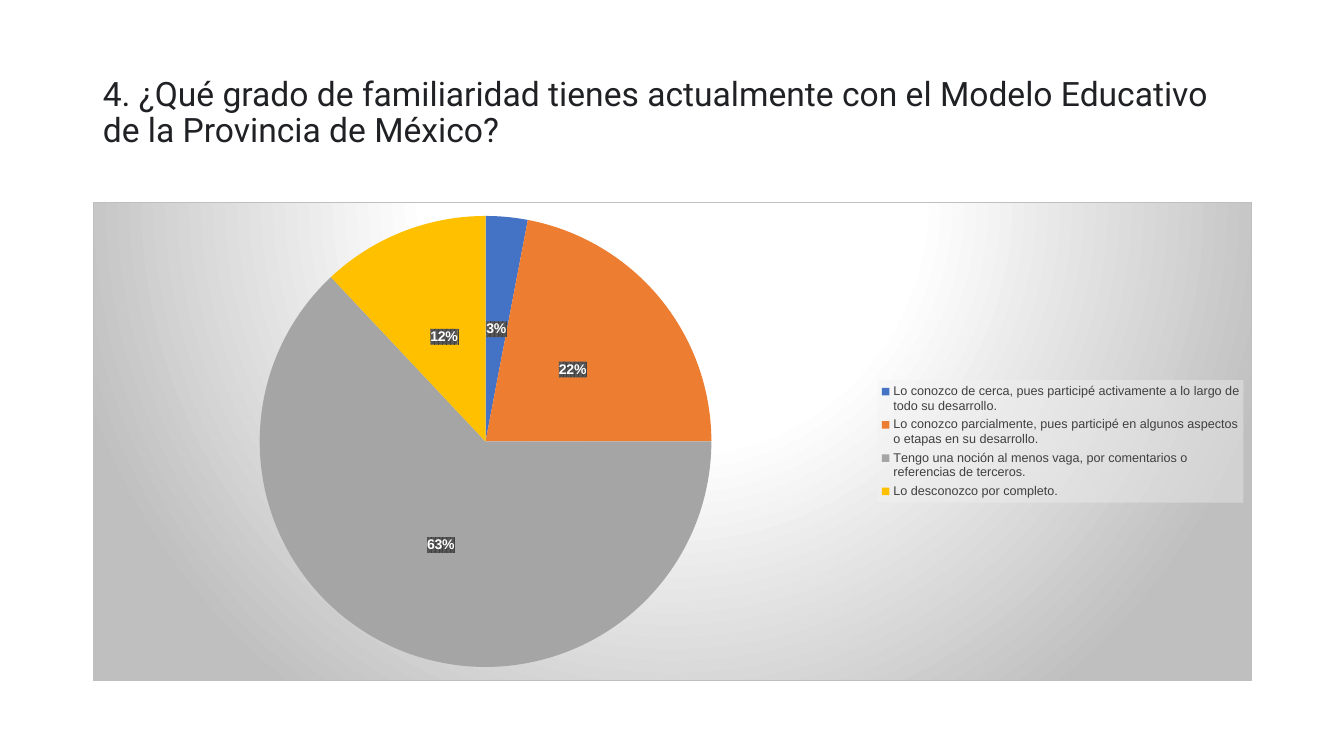
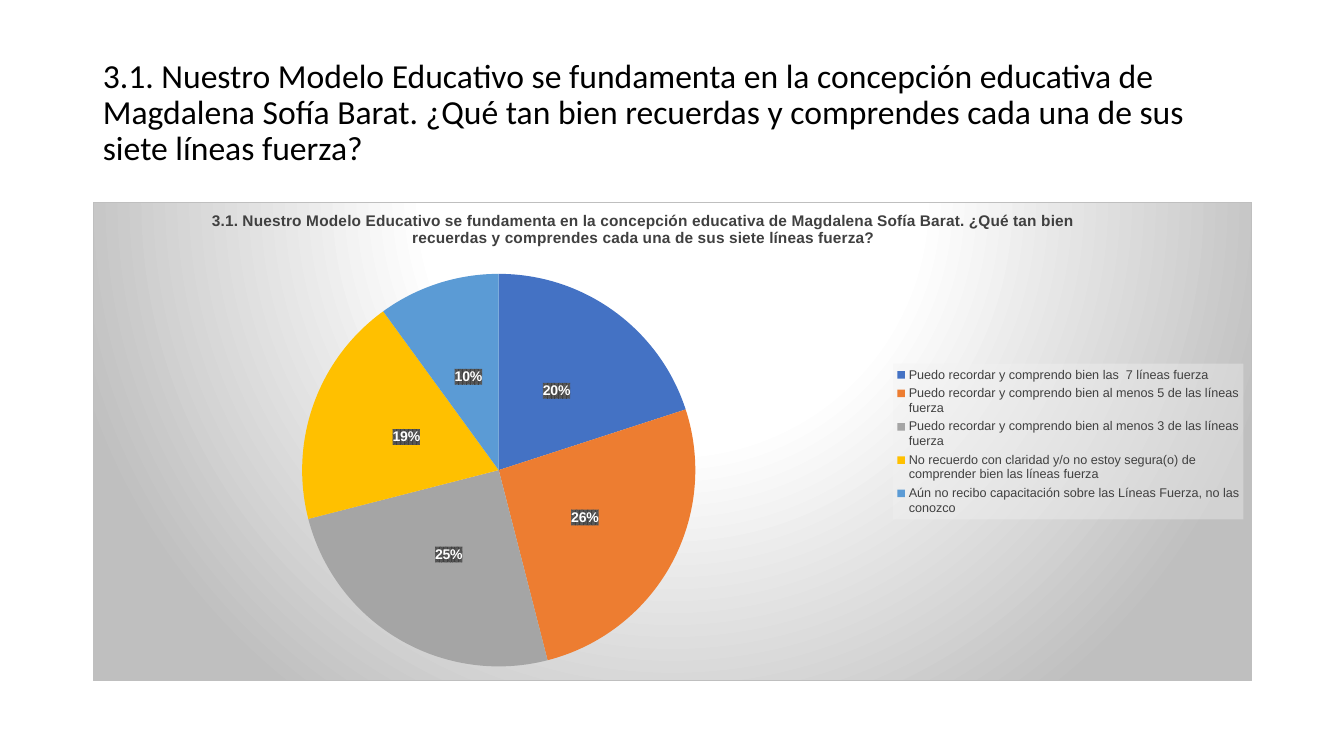
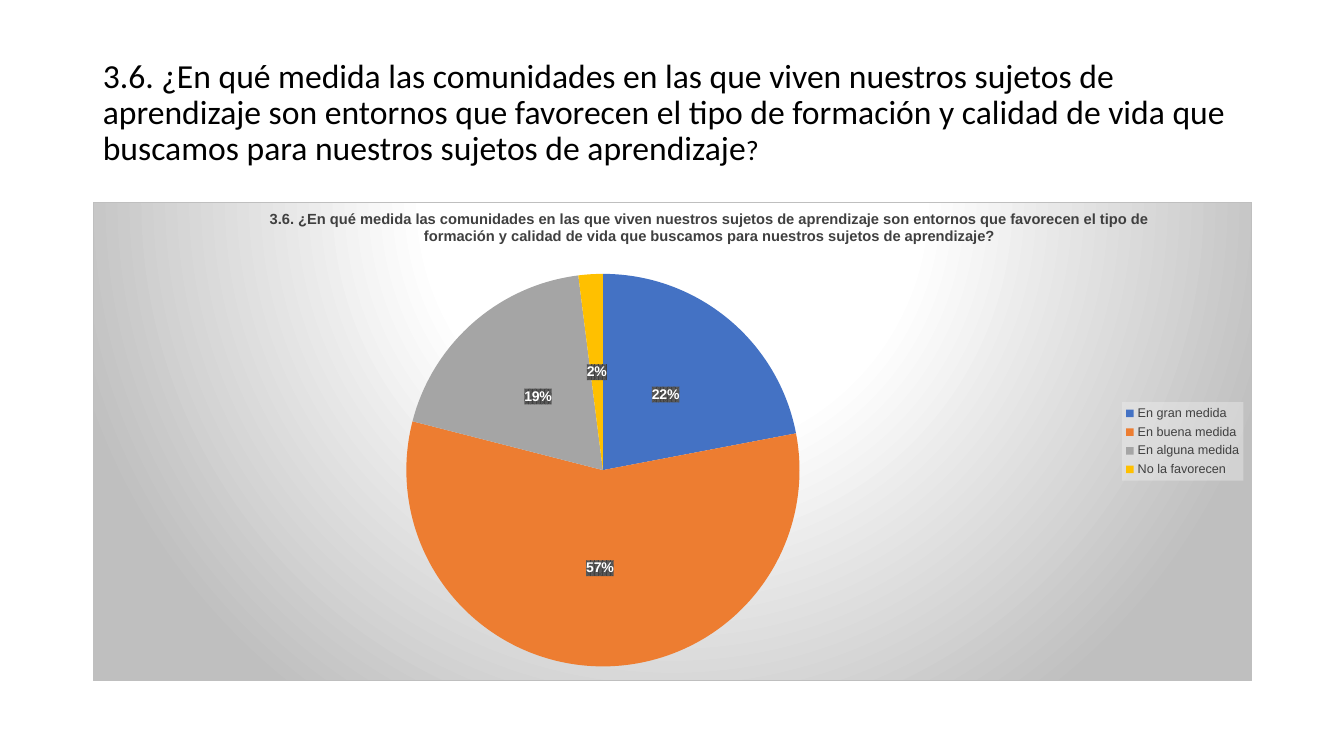
from pptx import Presentation
from pptx.chart.data import CategoryChartData
from pptx.dml.color import RGBColor
from pptx.enum.chart import XL_CHART_TYPE, XL_LABEL_POSITION, XL_LEGEND_POSITION
from pptx.enum.text import MSO_ANCHOR, MSO_AUTO_SIZE, PP_ALIGN
from pptx.oxml import parse_xml
from pptx.oxml.ns import nsdecls, qn
from pptx.util import Inches, Pt

BLACK = RGBColor(0x00, 0x00, 0x00)
INK = RGBColor(0x20, 0x21, 0x24)
CHARCOAL = RGBColor(0x40, 0x40, 0x40)
DIM = RGBColor(0x59, 0x59, 0x59)
SILVER = RGBColor(0xBF, 0xBF, 0xBF)
MIST = RGBColor(0xF2, 0xF2, 0xF2)
WHITE = RGBColor(0xFF, 0xFF, 0xFF)
SLICES = [
    RGBColor(0x44, 0x72, 0xC4),
    RGBColor(0xED, 0x7D, 0x31),
    RGBColor(0xA5, 0xA5, 0xA5),
    RGBColor(0xFF, 0xC0, 0x00),
    RGBColor(0x5B, 0x9B, 0xD5),
]

PANEL_FILL = f"""<a:gradFill><a:gsLst>
  <a:gs pos="0"><a:srgbClr val="{WHITE}"/></a:gs>
  <a:gs pos="39000"><a:srgbClr val="{WHITE}"/></a:gs>
  <a:gs pos="100000"><a:srgbClr val="{SILVER}"/></a:gs></a:gsLst>
  <a:path path="circle"><a:fillToRect l="50000" t="-80000" r="50000" b="180000"/></a:path>
</a:gradFill><a:ln w="9525"><a:solidFill><a:srgbClr val="{SILVER}"/></a:solidFill></a:ln>"""
LEGEND_FILL = f"""<a:solidFill><a:srgbClr val="{MIST}"><a:alpha val="39000"/></a:srgbClr></a:solidFill>"""
LABEL_FILL = f"""<a:pattFill prst="pct75"><a:fgClr><a:srgbClr val="{CHARCOAL}"/></a:fgClr>
<a:bgClr><a:srgbClr val="{DIM}"/></a:bgClr></a:pattFill>"""

QUESTIONS = [
    {
        "title": [("4. ¿Qué grado de familiaridad tienes actualmente con el Modelo Educativo "
                   "de la Provincia de México?", 24)],
        "font": "Roboto", "color": INK,
        "answers": [
            ("Lo conozco de cerca, pues participé activamente a lo largo de todo su desarrollo.", 3),
            ("Lo conozco parcialmente, pues participé en algunos aspectos o etapas en su desarrollo.", 22),
            ("Tengo una noción al menos vaga, por comentarios o referencias de terceros.", 63),
            ("Lo desconozco por completo.", 12),
        ],
    },
    {
        "title": [("3.1. Nuestro Modelo Educativo se fundamenta en la concepción educativa de "
                   "Magdalena Sofía Barat. ¿Qué tan bien recuerdas y comprendes cada una de sus "
                   "siete líneas fuerza?", 24)],
        "font": "Calibri", "color": BLACK,
        "heading": {"size": 11, "left": 0.1, "pie_left": 0.18},
        "answers": [
            ("Puedo recordar y comprendo bien las  7 líneas fuerza", 20),
            ("Puedo recordar y comprendo bien al menos 5 de las líneas fuerza", 26),
            ("Puedo recordar y comprendo bien al menos 3 de las líneas fuerza", 25),
            ("No recuerdo con claridad y/o no estoy segura(o) de comprender bien las líneas fuerza", 19),
            ("Aún no recibo capacitación sobre las Líneas Fuerza, no las conozco", 10),
        ],
    },
    {
        "title": [("3.6. ¿En qué medida las comunidades en las que viven nuestros sujetos de "
                   "aprendizaje son entornos que favorecen el tipo de formación y calidad de vida "
                   "que buscamos para nuestros sujetos de aprendizaje", 24), ("?", 20)],
        "font": "Calibri", "color": BLACK,
        "heading": {"size": 10.5, "left": 0.15, "pie_left": 0.27},
        "answers": [
            ("En gran medida", 22),
            ("En buena medida", 57),
            ("En alguna medida", 19),
            ("No la favorecen", 2),
        ],
    },
]


def paint(element, fill):
    """Give a chart part its fill, just ahead of its text properties."""
    element.find(qn("c:txPr")).addprevious(
        parse_xml(f'<c:spPr {nsdecls("c", "a")}>{fill}</c:spPr>'))


def place(element, index, target="", **shares):
    """Fix a chart part at shares of the chart's size."""
    for layout in element.findall(qn("c:layout")):
        element.remove(layout)
    sides = "".join(f'<c:{side} val="{share}"/>' for side, share in shares.items())
    element.insert(index, parse_xml(
        f'<c:layout {nsdecls("c")}><c:manualLayout>{target}'
        f'<c:xMode val="edge"/><c:yMode val="edge"/>{sides}</c:manualLayout></c:layout>'))


deck = Presentation()
deck.slide_width, deck.slide_height = Inches(13.33), Inches(7.5)
margin, content_width = Inches(0.92), Inches(11.5)

title_only = deck.slide_layouts[5]
title_frame = {"left": margin, "top": Inches(0.4), "width": content_width, "height": Inches(1.45)}
for name, value in title_frame.items():
    setattr(title_only.placeholders[0], name, value)

for question in QUESTIONS:
    page = deck.slides.add_slide(title_only)

    box = page.shapes.title.text_frame
    for name, value in {"word_wrap": True, "auto_size": MSO_AUTO_SIZE.NONE,
                        "vertical_anchor": MSO_ANCHOR.MIDDLE}.items():
        setattr(box, name, value)
    para = box.paragraphs[0]
    para.alignment, para.line_spacing = PP_ALIGN.LEFT, 0.9
    for text, size in question["title"]:
        span = para.add_run()
        span.text = text
        span.font.name, span.font.size = question["font"], Pt(size)
        span.font.color.rgb = question["color"]

    data = CategoryChartData()
    data.categories = [answer for answer, share in question["answers"]]
    data.add_series("Series 1", [share for answer, share in question["answers"]])
    chart = page.shapes.add_chart(
        XL_CHART_TYPE.PIE, margin, Inches(2), content_width, Inches(4.76), data).chart
    chart.has_legend = True
    chart.legend.position = XL_LEGEND_POSITION.RIGHT
    chart.legend.include_in_layout = False

    plot = chart.plots[0]
    plot.vary_by_categories = True
    plot.has_data_labels = True
    labels = plot.data_labels
    for name, value in {"show_percentage": True, "show_value": False, "number_format": "0%",
                        "number_format_is_linked": False,
                        "position": XL_LABEL_POSITION.CENTER}.items():
        setattr(labels, name, value)
    for index in range(len(question["answers"])):
        slice_fill = plot.series[0].points[index].format.fill
        slice_fill.solid()
        slice_fill.fore_color.rgb = SLICES[index]

    fonts = [(chart.font, 10, BLACK, False), (chart.legend.font, 9, CHARCOAL, False),
             (labels.font, 10, WHITE, True)]

    heading = question.get("heading")
    chart.has_title = heading is not None
    if heading:
        para = chart.chart_title.text_frame.paragraphs[0]
        span = para.add_run()
        span.text = "".join(text for text, size in question["title"])
        fonts.append((span.font, heading["size"], CHARCOAL, True))
        place(chart.chart_title._element, 1, x=heading["left"], y=0.01)
        place(chart._chartSpace.find(f".//{qn('c:plotArea')}"), 0,
              '<c:layoutTarget val="inner"/>', x=heading["pie_left"], y=0.15, w=0.34, h=0.82)

    for font, size, color, bold in fonts:
        font.name, font.size, font.bold = "Arial", Pt(size), bold
        font.color.rgb = color

    paint(chart._chartSpace, PANEL_FILL)
    paint(chart.legend._element, LEGEND_FILL)
    paint(labels._element, LABEL_FILL)

deck.save("out.pptx")
